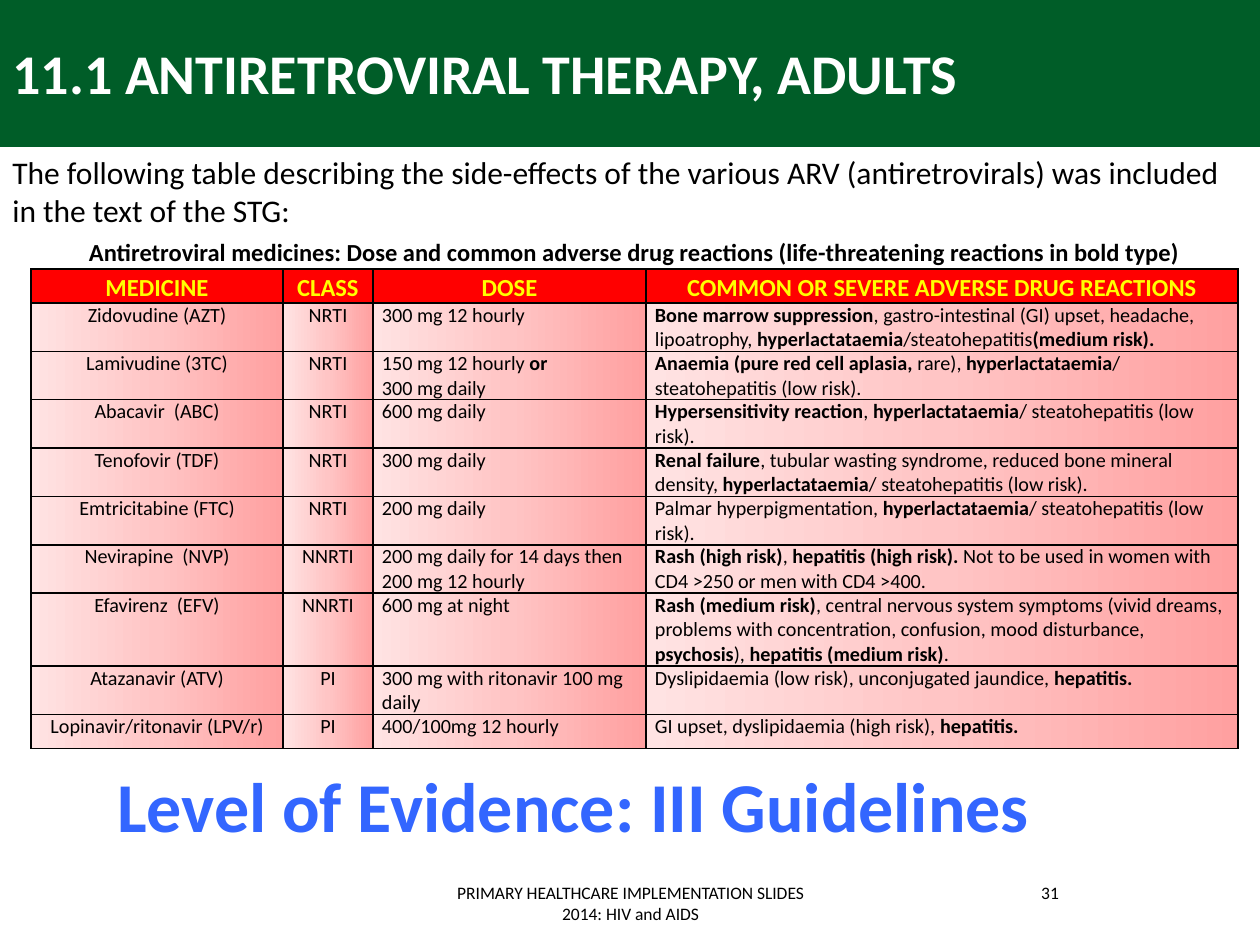
from dataclasses import dataclass
from pptx import Presentation
from pptx.dml.color import RGBColor
from pptx.enum.shapes import MSO_SHAPE
from pptx.enum.text import MSO_ANCHOR, PP_ALIGN
from pptx.oxml import parse_xml
from pptx.oxml.ns import nsdecls
from pptx.util import Emu, Pt

RECT = MSO_SHAPE.RECTANGLE
TOP = MSO_ANCHOR.TOP
LEFT, MID = PP_ALIGN.LEFT, PP_ALIGN.CENTER
FONT = "Calibri"
SIDES = ("lnL", "lnR", "lnT", "lnB")
STOPS = ((0, "FFA0A0"), (50, "FFC5C5"), (100, "FFE3E3"))


@dataclass
class Label:
    text: str
    x: int
    y: int
    w: int
    h: int
    size: float
    color: str = "000000"
    bold: bool = False
    align: int = LEFT


@dataclass
class Drug:
    name: str
    group: str
    dose: str
    harm: str
    h: int = 48


TITLE = Label("11.1 ANTIRETROVIRAL THERAPY, ADULTS",
              0, 32, 1134, 158, 32, "FFFFFF", True)
INTRO = Label("The following table describing the side-effects of the various ARV "
              "(antiretrovirals) was included in the text of the STG:",
              0, 147, 1260, 165, 18)
FOOT = Label("PRIMARY HEALTHCARE IMPLEMENTATION SLIDES 2014: HIV and AIDS",
             431, 876, 399, 50, 10, align=MID)
PAGE = Label("31", 903, 876, 294, 50, 10, align=MID)
NOTE = Label("Antiretroviral medicines: Dose and common adverse drug reactions "
             "(life-threatening reactions in bold type)",
             31, 231, 1207, 81, 14, bold=True, align=MID)
LEVEL = Label("Level of Evidence: III Guidelines",
              105, 756, 1029, 97, 40, "3366FF", True)

HEADS = ("MEDICINE", "CLASS", "DOSE", "COMMON OR SEVERE ADVERSE DRUG REACTIONS")
COLS = (252, 90, 273, 592)
HEAD_H = 34
# Asterisks enclose bold wording.
DRUGS = (
    Drug("Zidovudine (AZT)", "NRTI", "300 mg 12 hourly",
         "*Bone marrow suppression*, gastro-intestinal (GI) upset, headache, "
         "lipoatrophy, *hyperlactataemia*/steatohepatitis*(medium risk).*"),
    Drug("Lamivudine (3TC)", "NRTI", "150 mg 12 hourly *or*\n300 mg daily",
         "*Anaemia (pure red cell aplasia, *rare), *hyperlactataemia*"
         "/ steatohepatitis (low risk)."),
    Drug("Abacavir  (ABC)", "NRTI", "600 mg daily",
         "*Hypersensitivity reaction*, *hyperlactataemia*"
         "/ steatohepatitis (low risk)."),
    Drug("Tenofovir (TDF)", "NRTI", "300 mg daily",
         "*Renal failure*, tubular wasting syndrome, reduced bone mineral density, "
         "*hyperlactataemia*/ steatohepatitis (low risk)."),
    Drug("Emtricitabine (FTC)", "NRTI", "200 mg daily",
         "Palmar hyperpigmentation, *hyperlactataemia*"
         "/ steatohepatitis (low risk)."),
    Drug("Nevirapine  (NVP)", "NNRTI",
         "200 mg daily for 14 days then 200 mg 12 hourly",
         "*Rash (high risk)*, *hepatitis (high risk).* Not to be used in women "
         "with CD4 >250 or men with CD4 >400."),
    Drug("Efavirenz  (EFV)", "NNRTI", "600 mg at night",
         "*Rash (medium risk)*, central nervous system symptoms (vivid dreams, "
         "problems with concentration, confusion, mood disturbance, "
         "*psychosis*), *hepatitis (medium risk)*.", 73),
    Drug("Atazanavir (ATV)", "PI", "300 mg with ritonavir 100 mg daily",
         "Dyslipidaemia (low risk), unconjugated jaundice, *hepatitis.*"),
    Drug("Lopinavir/ritonavir (LPV/r)", "PI", "400/100mg 12 hourly",
         "GI upset, dyslipidaemia (high risk), *hepatitis.*", 34),
)


def px(n: int) -> Emu:
    return Emu(round(n * 914400 / 126))


def rgb(code: str) -> RGBColor:
    return RGBColor.from_string(code)


def write(frame, text: str, size: float, color: str, bold: bool, align: int,
          space: float = 1.0) -> None:
    for i, line in enumerate(text.split("\n")):
        para = frame.add_paragraph() if i else frame.paragraphs[0]
        para.alignment = align
        para.line_spacing = space
        for j, part in enumerate(line.split("*")):
            if part:
                run = para.add_run()
                run.text = part
                font = run.font
                font.name, font.size = FONT, Pt(size)
                font.bold = bold or j % 2 == 1
                font.color.rgb = rgb(color)


def fill_in(shape, item: Label) -> None:
    frame = shape.text_frame
    frame.word_wrap = True
    frame.vertical_anchor = TOP
    write(frame, item.text, item.size, item.color, item.bold, item.align)


def label(slide, item: Label) -> None:
    box = slide.shapes.add_textbox(px(item.x), px(item.y), px(item.w), px(item.h))
    fill_in(box, item)


def block(slide, x: int, y: int, w: int, h: int, color: str):
    shape = slide.shapes.add_shape(RECT, px(x), px(y), px(w), px(h))
    shape.shadow.inherit = False
    shape.fill.solid()
    shape.fill.fore_color.rgb = rgb(color)
    shape.line.fill.background()
    return shape


def border(cell) -> None:
    props = cell._tc.get_or_add_tcPr()
    for side in SIDES:
        props.append(parse_xml(
            f'<a:{side} {nsdecls("a")} w="12700"><a:solidFill>'
            f'<a:srgbClr val="000000"/></a:solidFill></a:{side}>'))


def shade(cell) -> None:
    stops = "".join(f'<a:gs pos="{pos * 1000}"><a:srgbClr val="{code}"/></a:gs>'
                    for pos, code in STOPS)
    cell._tc.get_or_add_tcPr().append(parse_xml(
        f'<a:gradFill {nsdecls("a")} rotWithShape="1"><a:gsLst>{stops}</a:gsLst>'
        '<a:lin ang="10800000" scaled="0"/></a:gradFill>'))


def grid(slide) -> None:
    rows = [HEADS] + [(d.name, d.group, d.dose, d.harm) for d in DRUGS]
    highs = [HEAD_H] + [d.h for d in DRUGS]
    table = slide.shapes.add_table(len(rows), len(COLS), px(31), px(269),
                                   px(sum(COLS)), px(sum(highs))).table
    table.first_row = table.horz_banding = False
    for col, wide in zip(table.columns, COLS):
        col.width = px(wide)
    for r, (texts, high) in enumerate(zip(rows, highs)):
        table.rows[r].height = px(high)
        for c, text in enumerate(texts):
            cell = table.cell(r, c)
            cell.margin_left = cell.margin_right = px(9)
            cell.margin_top = cell.margin_bottom = 0
            cell.vertical_anchor = TOP
            border(cell)
            if r == 0:
                cell.fill.solid()
                cell.fill.fore_color.rgb = rgb("FF0000")
                write(cell.text_frame, text, 14, "FFFF00", True, MID, 1.15)
            else:
                shade(cell)
                write(cell.text_frame, text, 11.5, "000000", False,
                      MID if c < 2 else LEFT)


def main() -> None:
    deck = Presentation()
    deck.slide_width, deck.slide_height = px(1260), px(945)
    slide = deck.slides.add_slide(deck.slide_layouts[6])
    block(slide, 0, 0, 1260, 147, "005D28")
    for item in (FOOT, PAGE, TITLE, INTRO):
        label(slide, item)
    grid(slide)
    label(slide, NOTE)
    panel = block(slide, LEVEL.x, LEVEL.y, LEVEL.w, LEVEL.h, "FFFFFF")
    fill_in(panel, LEVEL)
    deck.save("out.pptx")


if __name__ == "__main__":
    main()
